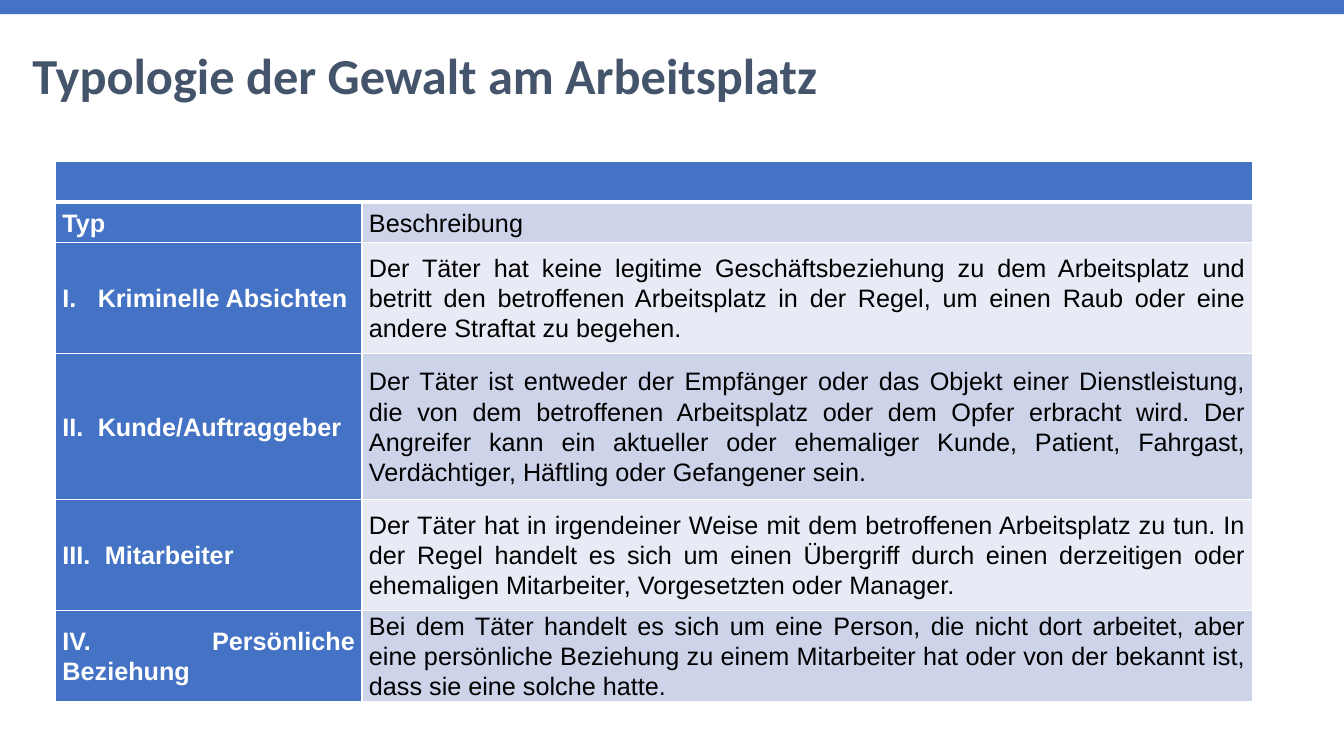
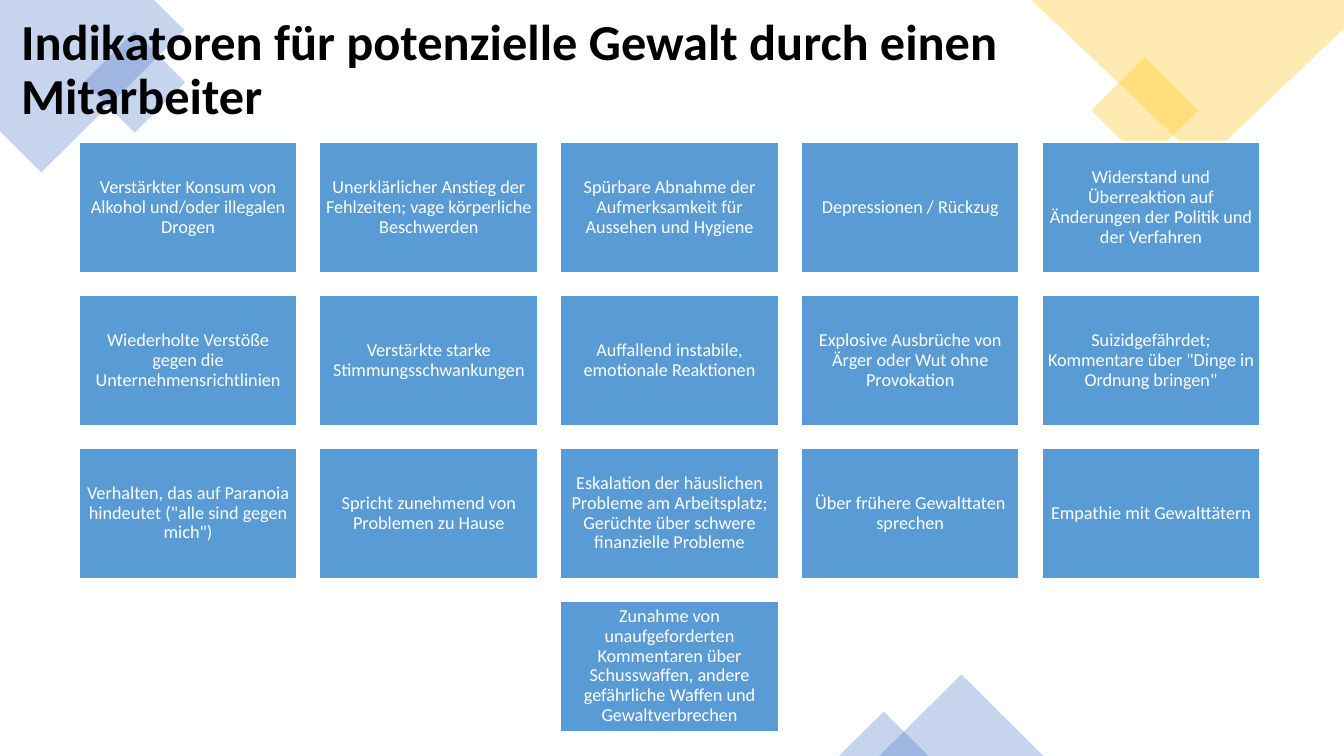
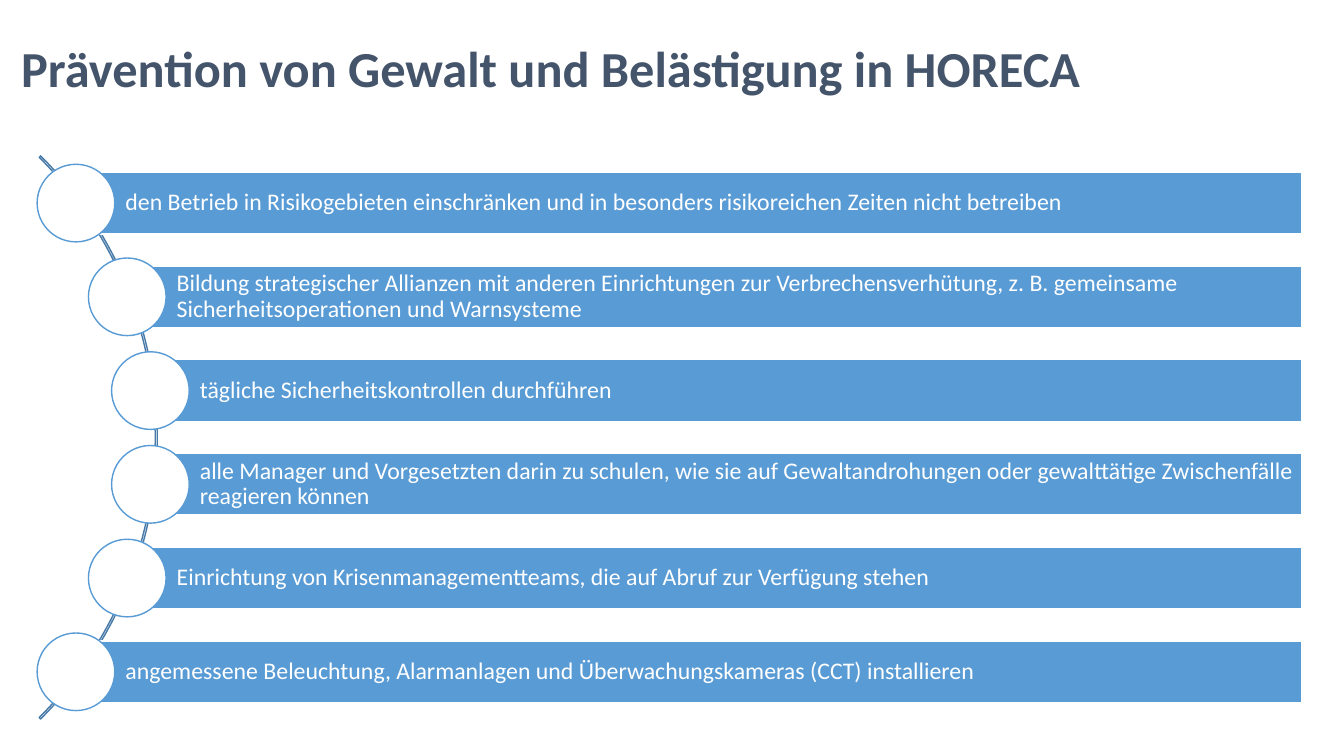
from dataclasses import dataclass
from math import sqrt
from typing import Any, NamedTuple

from lxml import etree
from pptx import Presentation, dml, util as u
from pptx.dml.color import RGBColor
from pptx.enum import shapes, text
from pptx.oxml import ns
from pptx.slide import Slide

# Shared look
FONT = "Calibri"
TABLE_FONT = "Arial"
WHITE, BLACK, SLATE = "FFFFFF", "000000", "44546A"
BLUE, SKY, ARC_BLUE, GOLD = "4472C4", "599BD5", "487AA8", "FFC000"
STRIPES = ("CDD4EA", "E8EBF5")
SHAPE = shapes.MSO_SHAPE
LEFT, CENTER, JUSTIFY = text.PP_ALIGN.LEFT, text.PP_ALIGN.CENTER, text.PP_ALIGN.JUSTIFY
MIDDLE, BOTTOM = text.MSO_ANCHOR.MIDDLE, text.MSO_ANCHOR.BOTTOM


class Area(NamedTuple):
    left: float
    top: float
    width: float
    height: float

    def lengths(self) -> list[u.Inches]:
        return [u.Inches(value) for value in self]


@dataclass(frozen=True)
class TextStyle:
    size: float
    color: str
    font: str = FONT
    bold: bool = False
    align: Any = LEFT
    spacing: float = 0.9
    anchor: Any = MIDDLE
    margins: tuple[float, float, float, float] = (0.05, 0.05, 0.05, 0.05)


@dataclass(frozen=True)
class Decoration:
    kind: Any
    area: Area
    color: str
    rotation: float = 0


class TypeRow(NamedTuple):
    label: str
    description: str
    height: float
    tab: float = 0.35


TITLE_AREA = Area(0.11, 0.09, 11.84, 1.23)
TITLE_MARGINS = (0.1, 0.05, 0.1, 0.05)
BOX_TEXT = TextStyle(13, WHITE, align=CENTER)
BAR_TEXT = TextStyle(17, WHITE, margins=(0.49, 0.05, 0.05, 0.05))

# Violence types
TYPE_ROWS = [
    TypeRow("Typ", "Beschreibung", 0.4),
    TypeRow("I.\tKriminelle Absichten",
            "Der Täter hat keine legitime Geschäftsbeziehung zu dem Arbeitsplatz und betritt den "
            "betroffenen Arbeitsplatz in der Regel, um einen Raub oder eine andere Straftat zu "
            "begehen.", 1.1),
    TypeRow("II.\tKunde/Auftraggeber",
            "Der Täter ist entweder der Empfänger oder das Objekt einer Dienstleistung, die von dem "
            "betroffenen Arbeitsplatz oder dem Opfer erbracht wird. Der Angreifer kann ein aktueller "
            "oder ehemaliger Kunde, Patient, Fahrgast, Verdächtiger, Häftling oder Gefangener sein.",
            1.45),
    TypeRow("III.\tMitarbeiter",
            "Der Täter hat in irgendeiner Weise mit dem betroffenen Arbeitsplatz zu tun. In der Regel "
            "handelt es sich um einen Übergriff durch einen derzeitigen oder ehemaligen Mitarbeiter, "
            "Vorgesetzten oder Manager.", 1.1, 0.42),
    TypeRow("IV. Persönliche Beziehung",
            "Bei dem Täter handelt es sich um eine Person, die nicht dort arbeitet, aber eine "
            "persönliche Beziehung zu einem Mitarbeiter hat oder von der bekannt ist, dass sie eine "
            "solche hatte.", 0.9),
]

# Warning signs, one list per grid row
INDICATORS = [
    ["Verstärkter Konsum von Alkohol und/oder illegalen Drogen",
     "Unerklärlicher Anstieg der Fehlzeiten; vage körperliche Beschwerden",
     "Spürbare Abnahme der Aufmerksamkeit für Aussehen und Hygiene",
     "Depressionen / Rückzug",
     "Widerstand und Überreaktion auf Änderungen der Politik und der Verfahren"],
    ["Wiederholte Verstöße gegen die Unternehmensrichtlinien",
     "Verstärkte starke Stimmungsschwankungen",
     "Auffallend instabile, emotionale Reaktionen",
     "Explosive Ausbrüche von Ärger oder Wut ohne Provokation",
     'Suizidgefährdet; Kommentare über "Dinge in Ordnung bringen"'],
    ['Verhalten, das auf Paranoia hindeutet ("alle sind gegen mich")',
     "Spricht zunehmend von Problemen zu Hause",
     "Eskalation der häuslichen Probleme am Arbeitsplatz; Gerüchte über schwere finanzielle Probleme",
     "Über frühere Gewalttaten sprechen",
     "Empathie mit Gewalttätern"],
    ["Zunahme von unaufgeforderten Kommentaren über Schusswaffen, andere gefährliche Waffen und "
     "Gewaltverbrechen"],
]

MEASURES = [
    "den Betrieb in Risikogebieten einschränken und in besonders risikoreichen Zeiten nicht betreiben",
    "Bildung strategischer Allianzen mit anderen Einrichtungen zur Verbrechensverhütung, z. B. "
    "gemeinsame Sicherheitsoperationen und Warnsysteme",
    "tägliche Sicherheitskontrollen durchführen",
    "alle Manager und Vorgesetzten darin zu schulen, wie sie auf Gewaltandrohungen oder gewalttätige "
    "Zwischenfälle reagieren können",
    "Einrichtung von Krisenmanagementteams, die auf Abruf zur Verfügung stehen",
    "angemessene Beleuchtung, Alarmanlagen und Überwachungskameras (CCT) installieren",
]

# Corner ornaments
CORNERS = [
    ([(1.53, 0), (0, 0), (0, 1.3), (0.41, 1.71), (1.83, 0.3)], BLUE),
    ([(13.33, 0), (10.23, 0), (11.93, 1.62), (13.33, 0.28)], GOLD),
]
DECORATIONS = [
    Decoration(SHAPE.RECTANGLE, Area(0.98, 0.46, 0.71, 0.71), BLUE, 315),
    Decoration(SHAPE.RECTANGLE, Area(10.98, 0.72, 0.75, 0.75), GOLD, 315),
    Decoration(SHAPE.ISOSCELES_TRIANGLE, Area(8.72, 6.69, 1.63, 0.81), BLUE),
    Decoration(SHAPE.ISOSCELES_TRIANGLE, Area(8.32, 7.06, 0.89, 0.44), BLUE),
]


def rgb(color: str) -> RGBColor:
    return RGBColor.from_string(color)


def apply(target: Any, values: dict[str, Any]) -> None:
    for name, value in values.items():
        setattr(target, name, value)


def paint(box: Any, fill: str | None, line: str | None = None, width: float = 1,
          opacity: int = 100) -> None:
    box.shadow.inherit = False
    if fill:
        box.fill.solid()
        box.fill.fore_color.rgb = rgb(fill)
        if opacity < 100:
            color = box.fill._xPr.find(".//" + ns.qn("a:srgbClr"))
            etree.SubElement(color, ns.qn("a:alpha"), val=str(opacity * 1000))
    else:
        box.fill.background()
    if line:
        box.line.color.rgb = rgb(line)
        box.line.width = u.Pt(width)
    else:
        box.line.fill.background()


def write(frame: Any, words: str, style: TextStyle) -> Any:
    para = frame.paragraphs[0]
    apply(para, {"alignment": style.align, "line_spacing": style.spacing})
    span = para.add_run()
    span.text = words
    apply(span.font, {"name": style.font, "size": u.Pt(style.size), "bold": style.bold})
    span.font.color.rgb = rgb(style.color)
    return para


def set_margins(holder: Any, margins: tuple[float, float, float, float]) -> None:
    sides = ("margin_left", "margin_top", "margin_right", "margin_bottom")
    apply(holder, dict(zip(sides, map(u.Inches, margins))))


def write_box(box: Any, words: str, style: TextStyle) -> None:
    frame = box.text_frame
    apply(frame, {"word_wrap": True, "auto_size": text.MSO_AUTO_SIZE.NONE,
                  "vertical_anchor": style.anchor})
    set_margins(frame, style.margins)
    write(frame, words, style)


def add_box(page: Slide, kind: Any, area: Area, fill: str | None, line: str | None = None,
            width: float = 1, opacity: int = 100) -> Any:
    box = page.shapes.add_shape(kind, *area.lengths())
    paint(box, fill, line, width, opacity)
    return box


def add_page(deck: Any) -> Slide:
    return deck.slides.add_slide(deck.slide_layouts.get_by_name("Title Only"))


def add_title(page: Slide, words: str, color: str = SLATE, area: Area = TITLE_AREA,
              anchor: Any = MIDDLE) -> None:
    title = page.shapes.title
    apply(title, dict(zip(("left", "top", "width", "height"), area.lengths())))
    write_box(title, words, TextStyle(36, color, bold=True, anchor=anchor, margins=TITLE_MARGINS))


def set_borders(cell: Any, top: float, bottom: float) -> None:
    edges = {"a:lnL": 1, "a:lnR": 1, "a:lnT": top, "a:lnB": bottom}
    properties = cell._tc.get_or_add_tcPr()
    for position, (tag, width) in enumerate(edges.items()):
        edge = etree.Element(ns.qn(tag), w=str(u.Pt(width)))
        fill = etree.SubElement(edge, ns.qn("a:solidFill"))
        etree.SubElement(fill, ns.qn("a:srgbClr"), val=WHITE)
        properties.insert(position, edge)


def fill_cell(cell: Any, color: str, top: float = 1, bottom: float = 1) -> None:
    cell.fill.solid()
    cell.fill.fore_color.rgb = rgb(color)
    set_borders(cell, top, bottom)


def add_tab(para: Any, position: float) -> None:
    stops = etree.SubElement(para._p.get_or_add_pPr(), ns.qn("a:tabLst"))
    etree.SubElement(stops, ns.qn("a:tab"), pos=str(u.Inches(position)), algn="l")


def build_typology(deck: Any) -> None:
    page = add_page(deck)
    add_title(page, "Typologie der Gewalt am Arbeitsplatz",
              area=Area(0.22, 0.32, 12.2, 0.78), anchor=BOTTOM)
    add_box(page, SHAPE.RECTANGLE, Area(0, 0, 13.33, 0.14), BLUE)

    # Table with a merged, empty header
    widths = (3.04, 8.83)
    heights = [0.4] + [row.height for row in TYPE_ROWS]
    area = Area(0.55, 1.6, sum(widths), sum(heights))
    table = page.shapes.add_table(len(heights), len(widths), *area.lengths()).table
    apply(table, {"first_row": False, "horz_banding": False})
    for column, width in zip(table.columns, widths):
        column.width = u.Inches(width)
    for row, height in zip(table.rows, heights):
        row.height = u.Inches(height)
    for cell in table.rows[0].cells:
        fill_cell(cell, BLUE, bottom=3)
    table.cell(0, 0).merge(table.cell(0, 1))

    label_style = TextStyle(18, WHITE, TABLE_FONT, True, JUSTIFY, 1.07)
    body_style = TextStyle(18, BLACK, TABLE_FONT, False, JUSTIFY, 1.07)
    for index, row in enumerate(TYPE_ROWS):
        cells = table.rows[index + 1].cells
        columns = ((row.label, label_style, BLUE),
                   (row.description, body_style, STRIPES[index % 2]))
        for cell, (words, style, color) in zip(cells, columns):
            fill_cell(cell, color, top=1 if index else 3)
            cell.vertical_anchor = MIDDLE
            set_margins(cell, (0.07, 0, 0.07, 0))
            para = write(cell.text_frame, words, style)
            if "\t" in words:
                add_tab(para, row.tab)


def build_indicators(deck: Any) -> None:
    page = add_page(deck)
    for points, color in CORNERS:
        corners = [(u.Inches(x), u.Inches(y)) for x, y in points]
        builder = page.shapes.build_freeform(*corners[0])
        builder.add_line_segments(corners[1:])
        paint(builder.convert_to_shape(), color, opacity=30)
    for item in DECORATIONS:
        add_box(page, item.kind, item.area, item.color, opacity=30).rotation = item.rotation

    # Title stays in front of the ornaments
    tree = page.shapes.title._element.getparent()
    tree.append(page.shapes.title._element)
    add_title(page, "Indikatoren für potenzielle Gewalt durch einen Mitarbeiter", BLACK)

    # Grid with each row centred
    columns = len(INDICATORS[0])
    step_x = (10.33 - 0.78) / (columns - 1)
    step_y = (5.96 - 1.41) / (len(INDICATORS) - 1)
    for row, indicators in enumerate(INDICATORS):
        first = (columns - len(indicators)) / 2
        for column, words in enumerate(indicators):
            area = Area(0.78 + (first + column) * step_x, 1.41 + row * step_y, 2.17, 1.3)
            box = add_box(page, SHAPE.RECTANGLE, area, SKY, WHITE, 1.5)
            write_box(box, words, BOX_TEXT)


def build_prevention(deck: Any) -> None:
    page = add_page(deck)
    add_title(page, "Prävention von Gewalt und Belästigung in HORECA")

    # Arc from 315 to 45 degrees; angles count in units of 100000 / 60000 degree
    arc_size, arc_x, arc_y = 7.9, -2.39, 4.34
    arc_area = Area(arc_x - arc_size / 2, arc_y - arc_size / 2, arc_size, arc_size)
    arc = add_box(page, SHAPE.BLOCK_ARC, arc_area, None, ARC_BLUE)
    for index, value in enumerate((315 * 0.6, 45 * 0.6, 0.02 / arc_size)):
        arc.adjustments[index] = value

    # Bars start at the circle centres, which follow the arc
    radius, right, bar_height, circle, step = 3.91, 12.91, 0.62, 0.77, 0.93
    for index, words in enumerate(MEASURES):
        offset = (index - (len(MEASURES) - 1) / 2) * step
        x, y = arc_x + sqrt(radius ** 2 - offset ** 2), arc_y + offset
        bar = add_box(page, SHAPE.RECTANGLE, Area(x, y - bar_height / 2, right - x, bar_height),
                      SKY, WHITE, 1.5)
        write_box(bar, words, BAR_TEXT)
        add_box(page, SHAPE.OVAL, Area(x - circle / 2, y - circle / 2, circle, circle), WHITE, SKY)


def main() -> None:
    deck = Presentation()
    apply(deck, {"slide_width": u.Inches(13.33), "slide_height": u.Inches(7.5)})
    for build in (build_typology, build_indicators, build_prevention):
        build(deck)
    deck.save("out.pptx")


if __name__ == "__main__":
    main()
